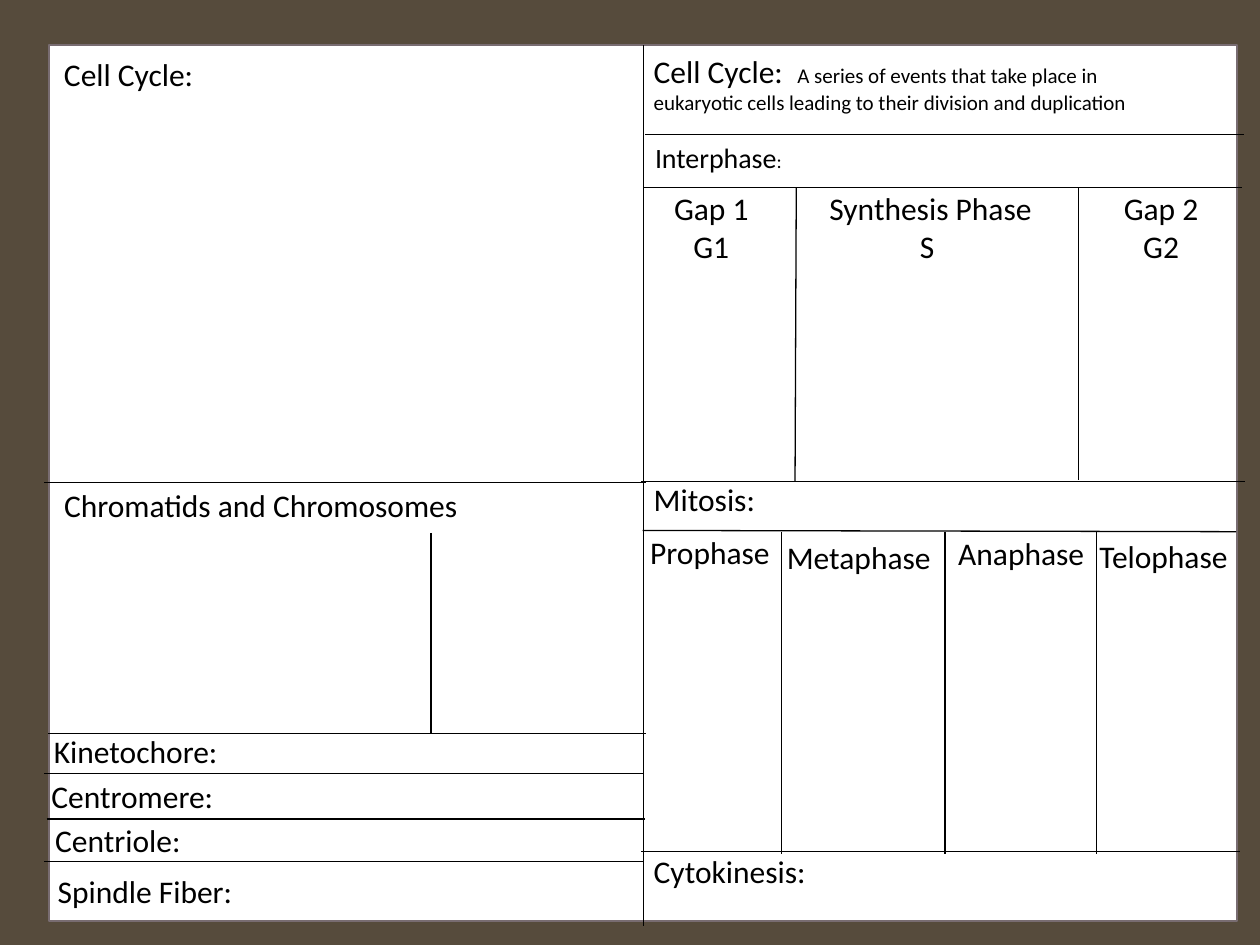
from lxml import etree
from pptx import Presentation
from pptx.dml.color import RGBColor
from pptx.enum.shapes import MSO_CONNECTOR, MSO_SHAPE
from pptx.enum.text import MSO_AUTO_SIZE, PP_ALIGN
from pptx.oxml.ns import qn
from pptx.util import Inches, Pt

COLORS = {"bg": "564B3C", "page": "FFFFFF", "border": "786C71", "ink": "000000"}
FONT = "Calibri"


def rgb(name):
    return RGBColor.from_string(COLORS[name])


def add_page(slide, x, y, w, h):
    sp = slide.shapes.add_shape(MSO_SHAPE.RECTANGLE, Inches(x), Inches(y), Inches(w), Inches(h))
    sp.shadow.inherit = False
    sp.fill.solid()
    sp.fill.fore_color.rgb = rgb("page")
    sp.line.color.rgb = rgb("border")
    sp.line.width = Pt(1.25)


def add_line(slide, x1, y1, x2, y2):
    line = slide.shapes.add_connector(
        MSO_CONNECTOR.STRAIGHT, Inches(x1), Inches(y1), Inches(x2), Inches(y2))
    line.line.color.rgb = rgb("ink")
    line.line.width = Pt(0.75)
    etree.SubElement(line._element.spPr, qn("a:effectLst"))


def add_text(slide, paragraphs, x, y, w, h=0.4, size=18, align=PP_ALIGN.LEFT):
    tf = slide.shapes.add_textbox(Inches(x), Inches(y), Inches(w), Inches(h)).text_frame
    tf.word_wrap = True
    tf.auto_size = MSO_AUTO_SIZE.SHAPE_TO_FIT_TEXT
    for i, runs in enumerate(paragraphs):
        p = tf.paragraphs[0] if i == 0 else tf.add_paragraph()
        p.alignment = align
        for text, run_size in runs:
            r = p.add_run()
            r.text = text
            r.font.name = FONT
            r.font.size = Pt(run_size or size)
            r.font.color.rgb = rgb("ink")


def add_label(slide, text, x, y, w=1.7, **fmt):
    add_text(slide, [[(line, None)] for line in text.split("\n")], x, y, w, **fmt)


def add_rules(slide):
    add_line(slide, 5.11, 0.36, 5.11, 7.35)
    left_rows = [(0.35, 5.13, 3.83), (0.38, 5.13, 5.82), (0.35, 5.1, 6.14),
                 (0.37, 5.12, 6.5), (0.35, 5.1, 6.84)]
    right_rows = [(5.12, 9.87, 1.07), (5.11, 9.86, 1.49), (5.09, 9.88, 3.82),
                  (5.09, 9.84, 6.76)]
    for x1, x2, y in left_rows + right_rows:
        add_line(slide, x1, y, x2, y)
    add_line(slide, 5.1, 4.21, 9.81, 4.22)
    add_line(slide, 3.42, 4.23, 3.42, 5.82)
    add_line(slide, 6.32, 1.49, 6.31, 3.82)
    add_line(slide, 8.56, 1.49, 8.56, 3.81)
    for x in (6.2, 7.5, 8.7):
        add_line(slide, x, 4.22, x, 6.78)


def add_left_terms(slide):
    add_label(slide, "Cell Cycle:", 0.41, 0.39)
    add_label(slide, "Chromatids and Chromosomes", 0.41, 3.81, 4.19)
    for term, x, y in [("Kinetochore:", 0.33, 5.76), ("Centromere:", 0.31, 6.12),
                       ("Centriole:", 0.34, 6.47), ("Spindle Fiber:", 0.36, 6.87)]:
        add_label(slide, term, x, y)


def add_right_terms(slide):
    definition = ("A series of events that take place in eukaryotic cells "
                  "leading to their division and duplication")
    add_text(slide, [[("Cell Cycle:  ", 18), (definition, 12)]], 5.09, 0.36, 4.34, 0.91)
    add_text(slide, [[("Interphase", 16), (":", 11)]], 5.1, 1.07, 4.69, 0.37)
    add_label(slide, "Mitosis:", 5.09, 3.76)
    add_label(slide, "Cytokinesis:", 5.09, 6.71)
    for stage, x, w in [("Gap 1\nG1", 5.09, 1.11), ("Synthesis Phase\nS ", 6.34, 2.09),
                        ("Gap 2\nG2", 8.66, 1.11)]:
        add_label(slide, stage, x, 1.45, w, h=0.71, align=PP_ALIGN.CENTER)
    for phase, x, y in [("Prophase", 4.96, 4.18), ("Metaphase", 6.14, 4.22),
                        ("Anaphase", 7.43, 4.19), ("Telophase", 8.56, 4.21)]:
        add_label(slide, phase, x, y, 1.35, align=PP_ALIGN.CENTER)


def main():
    prs = Presentation()
    prs.slide_width, prs.slide_height = Inches(10), Inches(7.5)
    slide = prs.slides.add_slide(prs.slide_layouts[6])
    fill = slide.background.fill
    fill.solid()
    fill.fore_color.rgb = rgb("bg")
    add_page(slide, 0.39, 0.36, 9.43, 6.95)
    add_rules(slide)
    add_left_terms(slide)
    add_right_terms(slide)
    prs.save("out.pptx")


if __name__ == "__main__":
    main()
